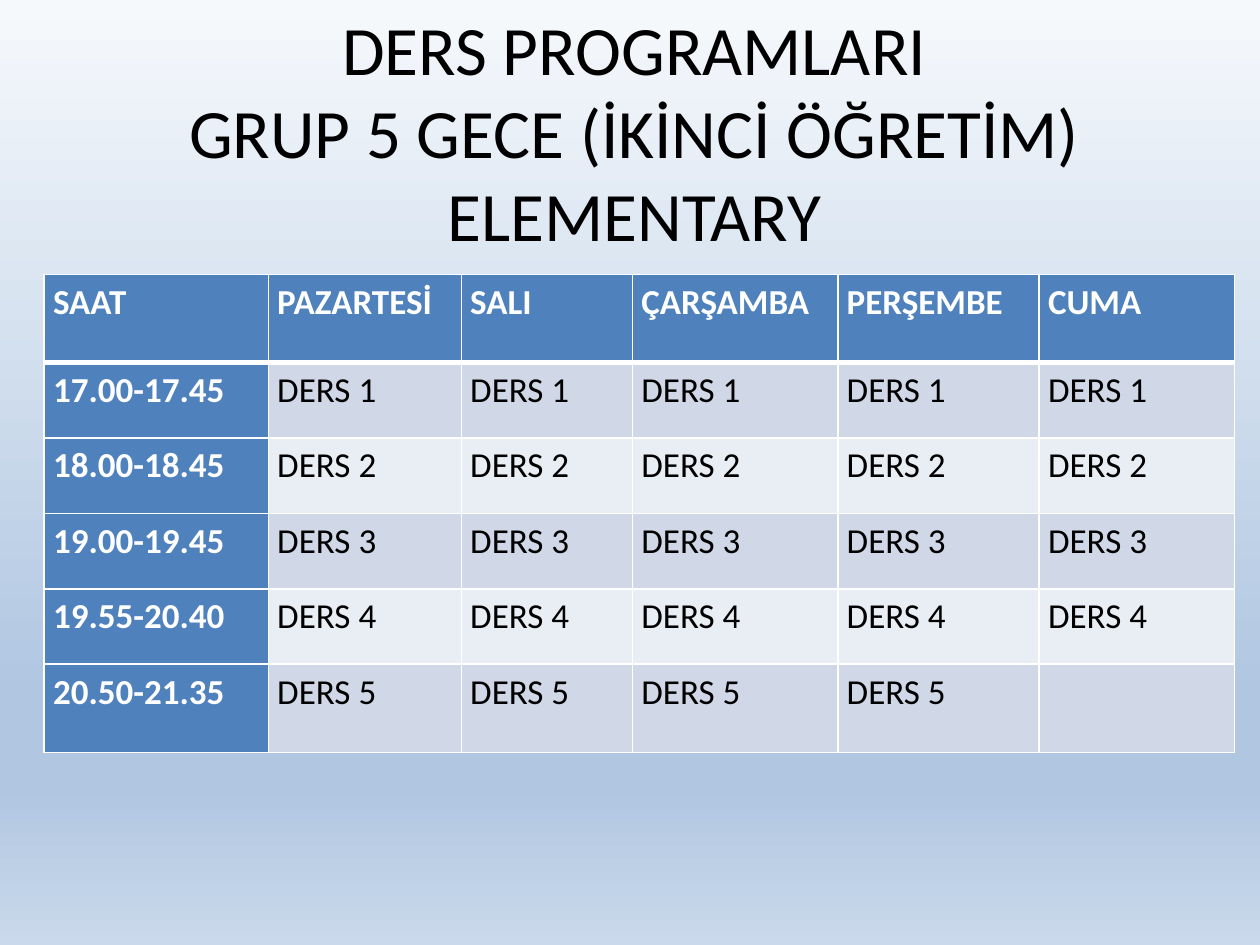
from copy import deepcopy
from pptx import Presentation
from pptx.dml.color import RGBColor
from pptx.enum.text import MSO_ANCHOR, MSO_AUTO_SIZE, PP_ALIGN
from pptx.oxml import parse_xml
from pptx.oxml.ns import nsdecls, qn
from pptx.util import Cm, Pt

TITLE = ["DERS PROGRAMLARI", "GRUP 5 GECE (İKİNCİ ÖĞRETİM)", "ELEMENTARY"]
DAYS = ["PAZARTESİ", "SALI", "ÇARŞAMBA", "PERŞEMBE", "CUMA"]
HOURS = ["17.00-17.45", "18.00-18.45", "19.00-19.45", "19.55-20.40", "20.50-21.35"]
FREE = {(5, 5)}  # (lesson, day) without a class

FONT = "Calibri"
COLORS = {"head": "4F81BD", "odd": "D0D8E8", "even": "E9EDF4",
          "light": "FFFFFF", "dark": "000000"}
SKY = [(0, "F6F9FC"), (0.74, "B0C6E1"), (0.83, "B0C6E1"), (1, "CAD9EB")]
WIDTHS = [4.52, 3.89, 3.45, 4.14, 4.06, 3.94]
HEIGHTS = [1.78, 1.52, 1.52, 1.52, 1.52, 1.78]


def rgb(name):
    return RGBColor.from_string(COLORS[name])


def paint_sky(slide):
    fill = slide.background.fill
    fill.gradient()
    fill.gradient_angle = 270  # counter-clockwise, so top to bottom
    stops = slide.element.find(".//" + qn("a:gsLst"))
    while len(stops) < len(SKY):
        stops.append(deepcopy(stops[0]))
    for stop, (place, color) in zip(fill.gradient_stops, SKY):
        stop.position = place
        stop.color.rgb = RGBColor.from_string(color)


def add_title(slide):
    title = slide.shapes.title
    title.left, title.top, title.width, title.height = (
        Cm(1.27), Cm(0.76), Cm(23.04), Cm(3.76))
    frame = title.text_frame
    frame.text = "\v".join(TITLE)
    frame.vertical_anchor = MSO_ANCHOR.MIDDLE
    frame.auto_size = MSO_AUTO_SIZE.NONE
    par = frame.paragraphs[0]
    par.alignment = PP_ALIGN.CENTER
    style(par.font, 39.6, "dark", False)


def style(font, size, color, bold):
    font.name, font.size, font.bold = FONT, Pt(size), bold
    font.color.rgb = rgb(color)


def add_edges(cell, row):
    """Draw white cell borders, thick between header and body."""
    props = cell._tc.get_or_add_tcPr()
    for side in "LRTB":
        thick = (row, side) in {(0, "B"), (1, "T")}
        props.append(parse_xml(
            f'<a:ln{side} {nsdecls("a")} w="{Pt(3 if thick else 1)}"><a:solidFill>'
            f'<a:srgbClr val="{COLORS["light"]}"/></a:solidFill></a:ln{side}>'))


def fill_cell(cell, text, row, col):
    head = row == 0 or col == 0
    add_edges(cell, row)
    cell.fill.solid()
    cell.fill.fore_color.rgb = rgb("head" if head else "odd" if row % 2 else "even")
    cell.margin_left = cell.margin_right = Cm(0.18)
    cell.margin_top = cell.margin_bottom = 0
    cell.text = text
    par = cell.text_frame.paragraphs[0]
    par.line_spacing, par.space_after = 1.15, Pt(10)
    par.alignment = PP_ALIGN.JUSTIFY if row and col == 0 else PP_ALIGN.LEFT
    style(par.font, 20, "light" if head else "dark", head)


def add_plan(slide):
    rows = [["SAAT", *DAYS]]
    for n, hour in enumerate(HOURS, 1):
        rows.append([hour] + ["" if (n, day) in FREE else f"DERS {n}"
                              for day in range(1, len(DAYS) + 1)])
    table = slide.shapes.add_table(
        len(rows), len(WIDTHS), Cm(0.89), Cm(5.53),
        Cm(sum(WIDTHS)), Cm(sum(HEIGHTS))).table
    table.first_col = True
    for col, width in zip(table.columns, WIDTHS):
        col.width = Cm(width)
    for row, height in zip(table.rows, HEIGHTS):
        row.height = Cm(height)
    for r, texts in enumerate(rows):
        for c, text in enumerate(texts):
            fill_cell(table.cell(r, c), text, r, c)


def main():
    deck = Presentation()
    deck.slide_width, deck.slide_height = Cm(25.4), Cm(19.05)
    slide = deck.slides.add_slide(deck.slide_layouts[5])
    paint_sky(slide)
    add_title(slide)
    add_plan(slide)
    deck.save("out.pptx")


if __name__ == "__main__":
    main()
